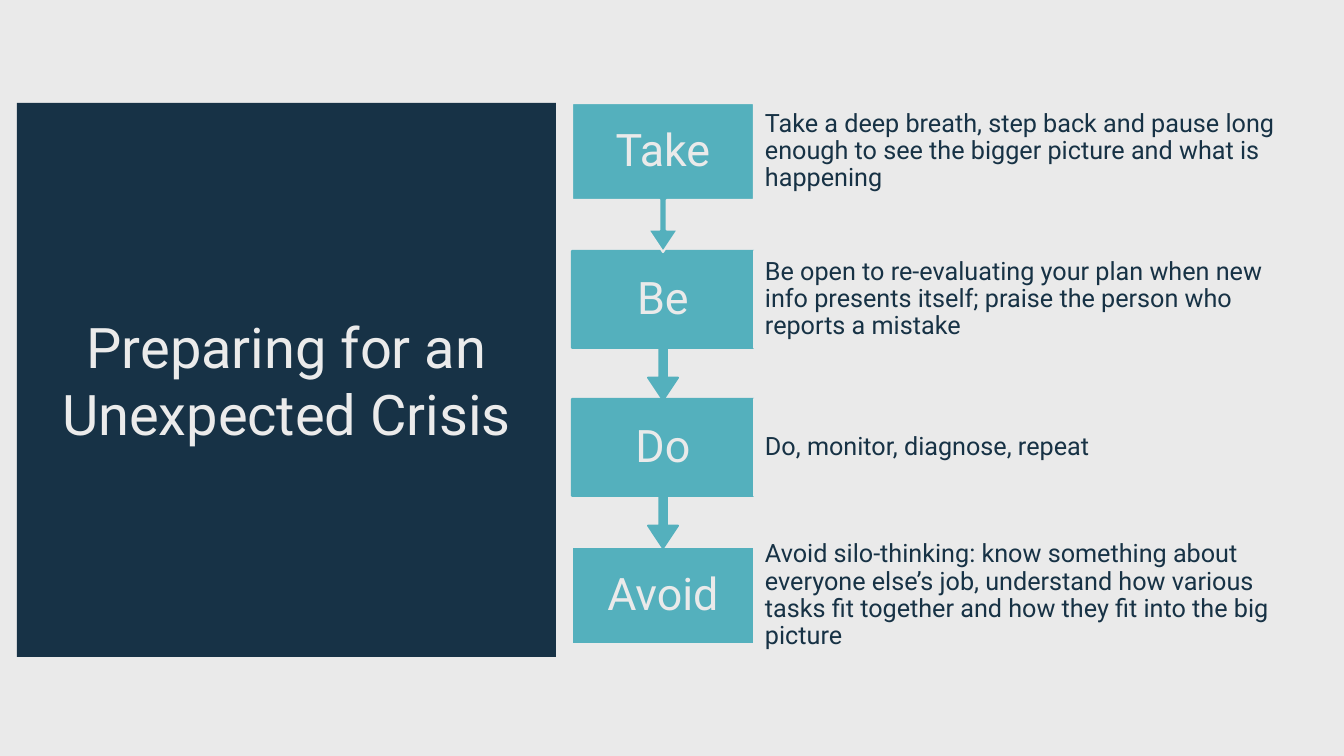
from pptx import Presentation
from pptx.dml.color import RGBColor
from pptx.enum.shapes import MSO_SHAPE
from pptx.enum.text import MSO_ANCHOR, PP_ALIGN
from pptx.util import Pt

RECTANGLE = MSO_SHAPE.RECTANGLE
ARROW_CALLOUT = MSO_SHAPE.UP_ARROW_CALLOUT
MIDDLE = MSO_ANCHOR.MIDDLE
LEFT, CENTER = PP_ALIGN.LEFT, PP_ALIGN.CENTER

PX = 914400 / 100.8
COLORS = {"paper": "EAEAEA", "navy": "173246", "ink": "173245",
          "teal": "54B0BD", "title": "EBEBEB"}


def add_block(preset, left, top, width, height, fill, line=None):
    block = slide.shapes.add_shape(
        preset, *(round(n * PX) for n in (left, top, width, height)))
    block.shadow.inherit = False
    block.fill.solid()
    block.fill.fore_color.rgb = RGBColor.from_string(COLORS[fill])
    if line:
        block.line.color.rgb = RGBColor.from_string(COLORS[line])
        block.line.width = Pt(1.5)
    else:
        block.line.fill.background()
    return block


def write(box, text, size, color, align, spacing, inset_x, inset_y):
    frame = box.text_frame
    frame.word_wrap = True
    frame.vertical_anchor = MIDDLE
    frame.margin_left = frame.margin_right = round(inset_x * PX)
    frame.margin_top = frame.margin_bottom = round(inset_y * PX)
    para = frame.paragraphs[0]
    para.text = text
    para.alignment = align
    para.line_spacing = spacing
    para.font.name = "Roboto"
    para.font.size = Pt(size)
    para.font.color.rgb = RGBColor.from_string(COLORS[color])


deck = Presentation()
deck.slide_width, deck.slide_height = round(1344 * PX), round(756 * PX)
slide = deck.slides.add_slide(deck.slide_layouts[6])
slide.background.fill.solid()
slide.background.fill.fore_color.rgb = RGBColor.from_string(COLORS["paper"])

# Title panel
panel = add_block(RECTANGLE, 17, 103, 539, 554, "navy")
write(panel, "Preparing for an Unexpected Crisis", 40, "title", CENTER, 1.0, 10, 5)

# Steps, laid from the bottom up so each arrow tip overlaps the next box
STEPS = [
    ("Take", "paper", "Take a deep breath, step back and pause long enough "
     "to see the bigger picture and what is happening"),
    ("Be", "teal", "Be open to re-evaluating your plan when new info "
     "presents itself; praise the person who reports a mistake"),
    ("Do", "teal", "Do, monitor, diagnose, repeat"),
    ("Avoid", "paper", "Avoid silo-thinking: know something about everyone "
     "else’s job, understand how various tasks fit together and how they "
     "fit into the big picture"),
]
STEP_LEFT, STEP_TOP, STEP_PITCH = 572, 103, 148
STEP_WIDTH, STEP_HEIGHT, CALLOUT_HEIGHT = 182, 97, 149
DETAIL_WIDTH = 546

for index, (label, outline, detail) in reversed(list(enumerate(STEPS))):
    top = STEP_TOP + index * STEP_PITCH
    if index == len(STEPS) - 1:
        add_block(RECTANGLE, STEP_LEFT, top, STEP_WIDTH, STEP_HEIGHT, "teal", outline)
    else:
        callout = add_block(ARROW_CALLOUT, STEP_LEFT, top, STEP_WIDTH,
                            CALLOUT_HEIGHT, "teal", outline)
        callout.rotation = 180
        for position, value in enumerate((0.05, 0.1, 0.15, 0.65)):
            callout.adjustments[position] = value

    # Upright label over the step box
    label_box = slide.shapes.add_textbox(
        *(round(n * PX) for n in (STEP_LEFT, top, STEP_WIDTH, STEP_HEIGHT)))
    write(label_box, label, 32, "paper", CENTER, 0.9, 13, 25)

    # Description beside it
    detail_box = add_block(RECTANGLE, STEP_LEFT + STEP_WIDTH, top,
                           DETAIL_WIDTH, STEP_HEIGHT, "paper", "paper")
    write(detail_box, detail, 18, "ink", LEFT, 0.9, 11, 25)

deck.save("out.pptx")
